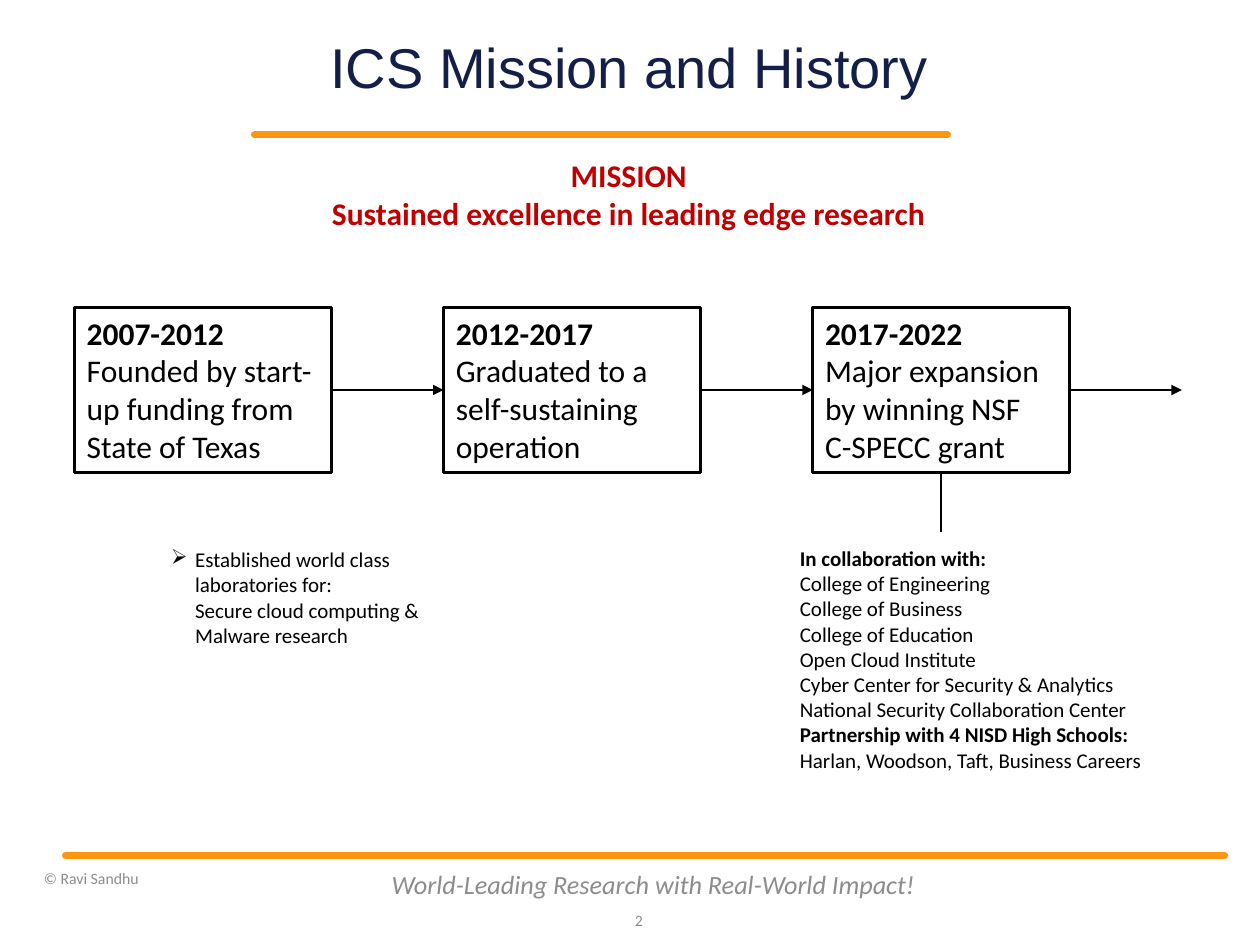
import pptx
import pptx.util
import pptx.dml.color
import pptx.enum.shapes
import pptx.enum.text
import pptx.oxml.ns
from dataclasses import dataclass
from lxml import etree

Inches = pptx.util.Inches
Align = pptx.enum.text.PP_ALIGN
Anchor = pptx.enum.text.MSO_ANCHOR


@dataclass(frozen=True)
class Theme:
    head: str = "Arial"
    body: str = "Calibri"
    navy: str = "131F49"
    red: str = "C00000"
    gold: str = "FF950E"
    gray: str = "8C8C8C"
    black: str = "000000"
    title: float = 32
    big: float = 18
    motto: float = 15
    small: float = 12
    tiny: float = 9


LOOK = Theme()

ERAS = [
    ("2007-2012", "Founded by start-up funding from State of Texas"),
    ("2012-2017", "Graduated to a self-sustaining operation"),
    ("2017-2022", "Major expansion by winning NSF \vC-SPECC grant"),
]
ALLIES = [
    "In collaboration with:",
    "College of Engineering",
    "College of Business",
    "College of Education",
    "Open Cloud Institute",
    "Cyber Center for Security & Analytics",
    "National Security Collaboration Center",
    "Partnership with 4 NISD High Schools:",
    "Harlan, Woodson, Taft, Business Careers",
]
LABS = "Established world class laboratories for:\vSecure cloud computing &\vMalware research"


def color(code):
    return pptx.dml.color.RGBColor.from_string(code)


def add_tag(node, name, **attrs):
    return etree.SubElement(node, pptx.oxml.ns.qn(name), attrs)


def write(frame, lines, size=LOOK.small, font=LOOK.body, ink=LOOK.black,
          bold=(), italic=False, align=Align.LEFT, anchor=Anchor.TOP,
          wrap=True, bullet=None):
    frame.word_wrap = wrap
    frame.vertical_anchor = anchor
    for i, line in enumerate(lines):
        para = frame.paragraphs[0] if i == 0 else frame.add_paragraph()
        para.text = line
        para.alignment = align
        if bullet:
            props = para._p.get_or_add_pPr()
            props.set("marL", str(Inches(0.19)))
            props.set("indent", str(-Inches(0.19)))
            add_tag(props, "a:buChar", char=bullet)
        for run in para.runs:
            run.font.name = font
            run.font.size = pptx.util.Pt(size)
            run.font.bold = i in bold
            run.font.italic = italic
            run.font.color.rgb = color(ink)


def add_text(slide, box, lines, **form):
    shape = slide.shapes.add_textbox(*map(Inches, box))
    write(shape.text_frame, lines, **form)


def add_line(slide, start, end, ink=LOOK.black, width=1.5, cap=None, arrow=False):
    line = slide.shapes.add_connector(
        pptx.enum.shapes.MSO_CONNECTOR.STRAIGHT, *map(Inches, start + end))
    line.line.color.rgb = color(ink)
    line.line.width = pptx.util.Pt(width)
    stroke = line.line._get_or_add_ln()
    if cap:
        stroke.set("cap", cap)
    if arrow:
        add_tag(stroke, "a:tailEnd", type="triangle")
    add_tag(line._element.spPr, "a:effectLst")


def add_rule(slide, left, top, width):
    add_line(slide, (left, top), (left + width, top), LOOK.gold, 4, cap="rnd")


def add_head(slide, left, top, width):
    title = slide.shapes.title
    title.left, title.top = Inches(left + 0.35), Inches(top)
    title.width, title.height = Inches(5.25), Inches(0.51)
    frame = title.text_frame
    frame.margin_left = frame.margin_right = 0
    frame.margin_top = frame.margin_bottom = 0
    write(frame, ["ICS Mission and History"], size=LOOK.title, font=LOOK.head,
          ink=LOOK.navy, align=Align.CENTER, anchor=Anchor.MIDDLE)
    frame.paragraphs[0].line_spacing = 0.9
    add_rule(slide, left, top + 0.77, width)
    add_text(slide, (left + 0.5, top + 0.89, 4.94, 0.71),
             ["MISSION", "Sustained excellence in leading edge research"],
             size=LOOK.big, ink=LOOK.red, bold=(0, 1), align=Align.CENTER, wrap=False)


def add_eras(slide, left, top, width, height, gap):
    for i, era in enumerate(ERAS):
        x = left + i * (width + gap)
        card = slide.shapes.add_shape(
            pptx.enum.shapes.MSO_SHAPE.RECTANGLE,
            *map(Inches, (x, top, width, height)))
        card.shadow.inherit = False
        card.fill.background()
        card.line.color.rgb = color(LOOK.black)
        card.line.width = pptx.util.Pt(1.5)
        write(card.text_frame, era, size=LOOK.big, bold=(0,))
        y = top + height / 2
        add_line(slide, (x + width, y), (x + width + gap, y), arrow=True)
    mid = x + width / 2
    add_line(slide, (mid, top + height), (mid, top + height + 0.47), width=1)


def add_notes(slide, left, top):
    add_text(slide, (left, top + 0.01, 2.78, 1.11), [LABS], bullet="➢")
    add_text(slide, (left + 4.99, top, 2.93, 1.92), ALLIES, bold=(0, 7))


def add_foot(slide, left, top, width):
    add_rule(slide, left, top, width)
    form = dict(ink=LOOK.gray, anchor=Anchor.MIDDLE)
    add_text(slide, (left - 0.27, top, 2.75, 0.36), ["© Ravi Sandhu"],
             size=LOOK.tiny, **form)
    add_text(slide, (left + 2.48, top + 0.03, 4.37, 0.4),
             ["World-Leading Research with Real-World Impact!"],
             size=LOOK.motto, italic=True, align=Align.CENTER, **form)
    add_text(slide, (left + 4.28, top + 0.31, 0.4, 0.4), ["2"],
             size=LOOK.tiny, align=Align.RIGHT, **form)


def main():
    deck = pptx.Presentation()
    deck.slide_width, deck.slide_height = Inches(10), Inches(7.5)
    slide = deck.slides.add_slide(deck.slide_layouts[5])
    add_head(slide, 2.02, 0.3, 5.5)
    add_eras(slide, 0.59, 2.44, 2.04, 1.31, 0.89)
    add_notes(slide, 1.26, 4.28)
    add_foot(slide, 0.52, 6.79, 9.2)
    deck.save("out.pptx")


if __name__ == "__main__":
    main()
